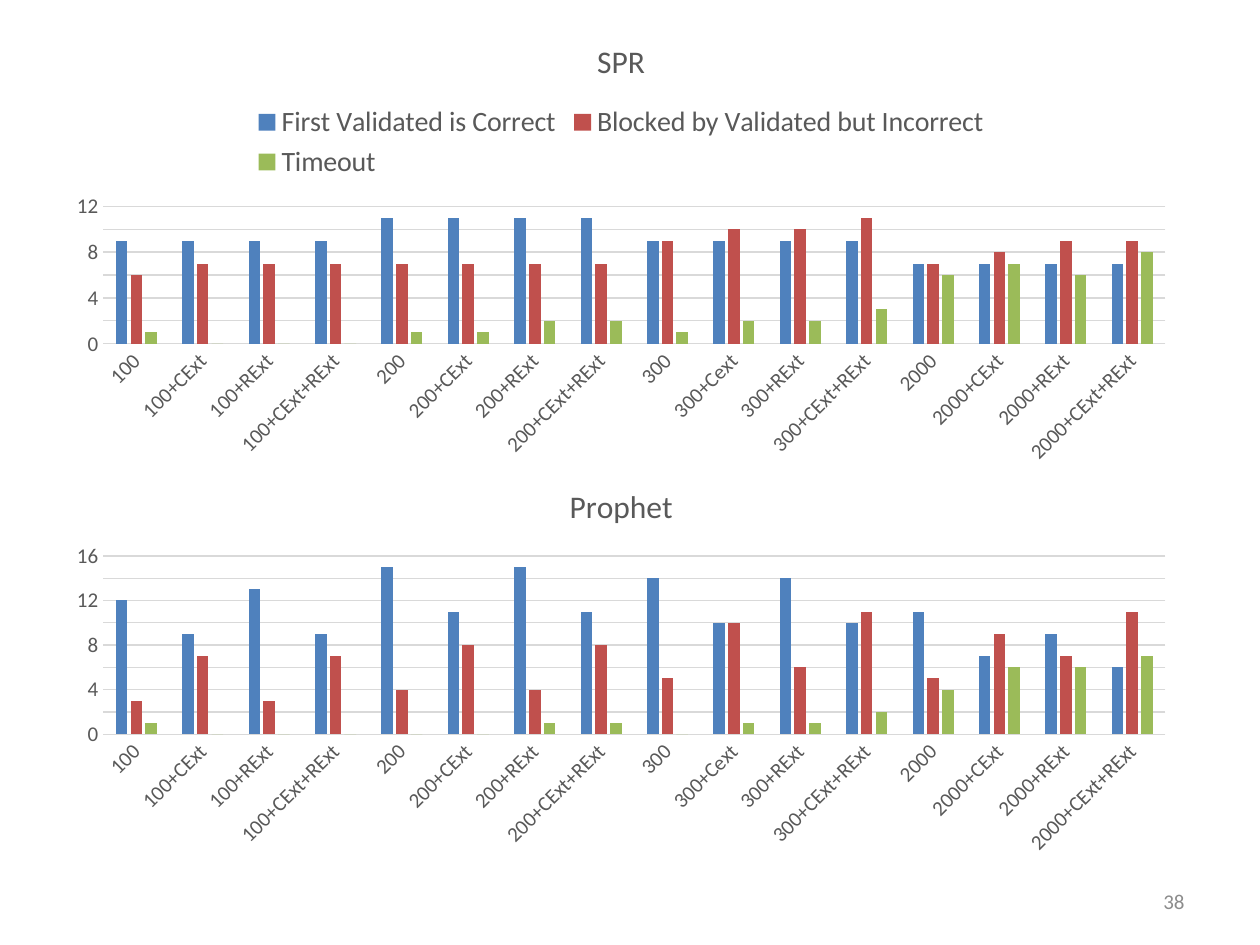
from pptx import Presentation
from pptx.chart.data import CategoryChartData
from pptx.dml.color import RGBColor
from pptx.enum.chart import XL_CHART_TYPE, XL_LEGEND_POSITION, XL_TICK_MARK
from pptx.enum.text import MSO_ANCHOR, PP_ALIGN
from pptx.oxml.ns import qn
from pptx.util import Inches, Pt

CLUSTERED = XL_CHART_TYPE.COLUMN_CLUSTERED
LEGEND_TOP = XL_LEGEND_POSITION.TOP
NO_TICK = XL_TICK_MARK.NONE
MIDDLE = MSO_ANCHOR.MIDDLE
RIGHT = PP_ALIGN.RIGHT

FONT = "Calibri"
TEXT_GREY = "595959"
LINE_GREY = "D9D9D9"
SERIES_COLORS = ["4F81BD", "C0504D", "9BBB59"]

CATEGORIES = [
    "100", "100+CExt", "100+RExt", "100+CExt+RExt",
    "200", "200+CExt", "200+RExt", "200+CExt+RExt",
    "300", "300+Cext", "300+RExt", "300+CExt+RExt",
    "2000", "2000+CExt", "2000+RExt", "2000+CExt+RExt",
]
SPR_SERIES = {
    "First Validated is Correct":
        [9, 9, 9, 9, 11, 11, 11, 11, 9, 9, 9, 9, 7, 7, 7, 7],
    "Blocked by Validated but Incorrect":
        [6, 7, 7, 7, 7, 7, 7, 7, 9, 10, 10, 11, 7, 8, 9, 9],
    "Timeout":
        [1, 0, 0, 0, 1, 1, 2, 2, 1, 2, 2, 3, 6, 7, 6, 8],
}
PROPHET_SERIES = {
    "Series 1": [12, 9, 13, 9, 15, 11, 15, 11, 14, 10, 14, 10, 11, 7, 9, 6],
    "Series 2": [3, 7, 3, 7, 4, 8, 4, 8, 5, 10, 6, 11, 5, 9, 7, 11],
    "Series 3": [1, 0, 0, 0, 0, 0, 1, 1, 0, 1, 1, 2, 4, 6, 6, 7],
}


def rgb(color):
    return RGBColor.from_string(color)


def style_font(font, size, color=TEXT_GREY):
    font.name = FONT
    font.size = Pt(size)
    font.bold = False
    font.color.rgb = rgb(color)


def style_line(line, color=LINE_GREY, width=0.75):
    line.color.rgb = rgb(color)
    line.width = Pt(width)


def write_text(frame, text, size, color=TEXT_GREY, align=None):
    para = frame.paragraphs[0]
    para.alignment = align
    span = para.add_run()
    span.text = text
    style_font(span.font, size, color)


def style_axes(chart, top_value):
    categories, values = chart.category_axis, chart.value_axis
    for axis in (categories, values):
        axis.major_tick_mark = axis.minor_tick_mark = NO_TICK
        style_font(axis.tick_labels.font, 12)
    style_line(categories.format.line)
    label_body = categories._element.find(qn("c:txPr")).find(qn("a:bodyPr"))
    label_body.set("rot", str(-45 * 60000))
    label_body.set("vert", "horz")
    values.format.line.fill.background()
    values.minimum_scale, values.maximum_scale = 0, top_value
    values.major_unit = 2
    values.has_major_gridlines = True
    style_line(values.major_gridlines.format.line)


def add_result_chart(page, box, title, series, top_value, legend=False):
    data = CategoryChartData()
    data.categories = CATEGORIES
    for name, counts in series.items():
        data.add_series(name, counts)
    chart = page.shapes.add_chart(CLUSTERED, *box, data).chart
    style_font(chart.font, 10, "000000")
    chart.has_title = True
    chart.chart_title.include_in_layout = False
    write_text(chart.chart_title.text_frame, title, 18)
    chart.has_legend = legend
    if legend:
        chart.legend.position = LEGEND_TOP
        chart.legend.include_in_layout = False
        style_font(chart.legend.font, 16)
    style_axes(chart, top_value)
    plot = chart.plots[0]
    plot.vary_by_categories = False
    plot.gap_width = 219
    plot.overlap = -27
    for bars, color in zip(plot.series, SERIES_COLORS):
        bars.format.fill.solid()
        bars.format.fill.fore_color.rgb = rgb(color)


def add_page_number(page, box, number):
    frame = page.shapes.add_textbox(*box).text_frame
    frame.word_wrap = True
    frame.vertical_anchor = MIDDLE
    write_text(frame, number, 12, color="8C8C8C", align=RIGHT)


def main():
    deck = Presentation()
    deck.slide_width, deck.slide_height = Inches(10), Inches(7.5)
    page = deck.slides.add_slide(deck.slide_layouts[6])
    left, width = Inches(0.43), Inches(9)
    add_result_chart(page, (left, Inches(0.14), width, Inches(3.62)),
                     "SPR", SPR_SERIES, 12, legend=True)
    add_result_chart(page, (left, Inches(3.68), width, Inches(3.17)),
                     "Prophet", PROPHET_SERIES, 16)
    add_page_number(
        page, (Inches(7.17), Inches(6.95), Inches(2.33), Inches(0.4)), "38")
    deck.save("out.pptx")


if __name__ == "__main__":
    main()
